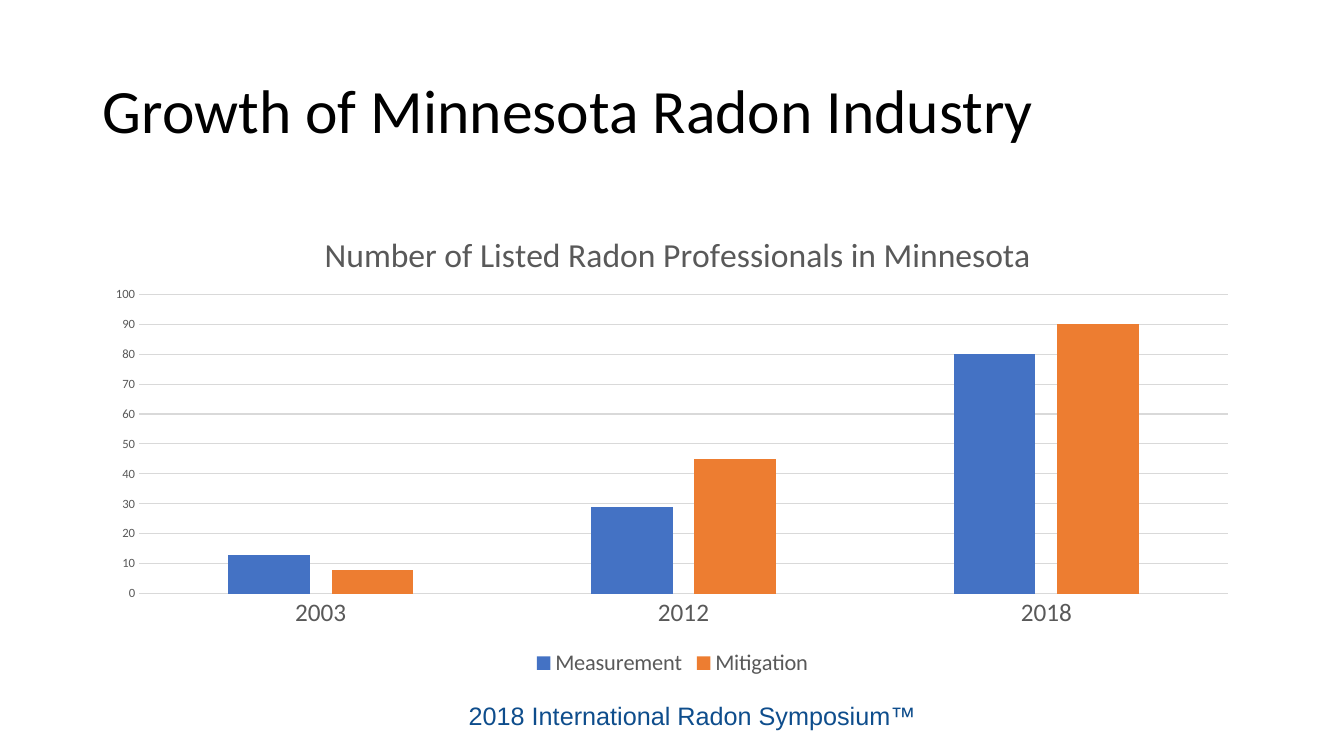
from dataclasses import dataclass

from lxml.etree import SubElement
from pptx import Presentation
from pptx.chart.data import CategoryChartData
from pptx.dml.color import RGBColor as RGB
from pptx.enum.chart import XL_CHART_TYPE as ChartType
from pptx.enum.chart import XL_LEGEND_POSITION as LegendPos
from pptx.enum.chart import XL_TICK_MARK as Tick
from pptx.enum.text import MSO_ANCHOR, PP_ALIGN
from pptx.oxml.ns import qn
from pptx.util import Inches, Pt

TITLE = "Growth of Minnesota Radon Industry"
FOOTER = "2018 International Radon Symposium™"
CHART_TITLE = "Number of Listed Radon Professionals in Minnesota"
YEARS = ["2003", "2012", "2018"]
PROFESSIONALS = [
    ("Measurement", [13, 29, 80], "4472C4"),
    ("Mitigation", [8, 45, 90], "ED7D31"),
]

# left, top, width, height in inches
TITLE_BOX = (0.92, 0.4, 11.5, 1.45)
CHART_BOX = (0.92, 2, 11.5, 4.76)
FOOTER_BOX = (4.55, 6.9, 4.68, 0.4)
PLOT_BOX = (1.38, 2.92, 10.8, 2.97)
CHART_TITLE_AT = (3.16, 2.24)


@dataclass(frozen=True)
class Theme:
    font: str = "Calibri"
    footer_font: str = "Arial"
    black: str = "000000"
    grey: str = "595959"
    rule: str = "D9D9D9"
    blue: str = "0E4D8C"
    title: int = 44
    chart_title: int = 24
    category: int = 18
    value: int = 9
    legend: int = 16
    footer: int = 18


THEME = Theme()


def style(font, size, color, name=THEME.font):
    font.name, font.size, font.bold = name, Pt(size), False
    font.color.rgb = RGB.from_string(color)


def rule(line):
    line.color.rgb = RGB.from_string(THEME.rule)
    line.width = Pt(0.75)


def write(tf, text, *font):
    p = tf.paragraphs[0]
    p.alignment = PP_ALIGN.LEFT
    r = p.add_run()
    r.text = text
    style(r.font, *font)
    return p


def place(parent, index, box, inner=False):
    """Fix a chart part at a slide position, as fractions of the chart."""
    for old in parent.findall(qn("c:layout")):
        parent.remove(old)
    layout = SubElement(parent, qn("c:layout"))
    parent.insert(index, layout)
    manual = SubElement(layout, qn("c:manualLayout"))
    left, top, width, height = CHART_BOX
    fractions = [(box[0] - left) / width, (box[1] - top) / height]
    fractions += [n / total for n, total in zip(box[2:], (width, height))]
    settings = [("layoutTarget", "inner")] if inner else []
    settings += [("xMode", "edge"), ("yMode", "edge")]
    settings += [(key, f"{n:.4f}") for key, n in zip("xywh", fractions)]
    for key, value in settings:
        SubElement(manual, qn(f"c:{key}")).set("val", value)


def add_title(s):
    sp = s.shapes.title
    sp.left, sp.top, sp.width, sp.height = map(Inches, TITLE_BOX)
    sp.text_frame.vertical_anchor = MSO_ANCHOR.MIDDLE
    p = write(sp.text_frame, TITLE, THEME.title, THEME.black)
    p.line_spacing = 0.9


def add_growth_chart(s):
    data = CategoryChartData()
    data.categories = YEARS
    for name, values, _ in PROFESSIONALS:
        data.add_series(name, values)
    frame = s.shapes.add_chart(
        ChartType.COLUMN_CLUSTERED, *map(Inches, CHART_BOX), data)
    chart = frame.chart
    style(chart.font, 10, THEME.black)

    chart.has_title = True
    title = chart.chart_title
    r = title.text_frame.paragraphs[0].add_run()
    r.text = CHART_TITLE
    style(r.font, THEME.chart_title, THEME.grey)
    title.include_in_layout = False
    place(title.element if hasattr(title, "element") else title._element,
          1, CHART_TITLE_AT)

    plot = chart.plots[0]
    plot.gap_width, plot.overlap = 219, -27
    plot.vary_by_categories = False
    for series, (_, _, color) in zip(plot.series, PROFESSIONALS):
        series.format.fill.solid()
        series.format.fill.fore_color.rgb = RGB.from_string(color)

    years, counts = chart.category_axis, chart.value_axis
    for axis, size in ((years, THEME.category), (counts, THEME.value)):
        axis.major_tick_mark = axis.minor_tick_mark = Tick.NONE
        style(axis.tick_labels.font, size, THEME.grey)
    rule(years.format.line)
    counts.format.line.fill.background()
    counts.has_major_gridlines = True
    rule(counts.major_gridlines.format.line)
    counts.minimum_scale, counts.maximum_scale = 0, 100
    counts.major_unit = 10

    chart.has_legend = True
    chart.legend.position = LegendPos.BOTTOM
    chart.legend.include_in_layout = False
    style(chart.legend.font, THEME.legend, THEME.grey)
    place(next(chart.element.iter(qn("c:plotArea"))), 0, PLOT_BOX, inner=True)


def add_footer(s):
    tf = s.shapes.add_textbox(*map(Inches, FOOTER_BOX)).text_frame
    tf.word_wrap = False
    write(tf, FOOTER, THEME.footer, THEME.blue, THEME.footer_font)


def main():
    prs = Presentation()
    prs.slide_width, prs.slide_height = Inches(13.33), Inches(7.5)
    s = prs.slides.add_slide(prs.slide_layouts[5])
    add_title(s)
    add_growth_chart(s)
    add_footer(s)
    prs.save("out.pptx")


if __name__ == "__main__":
    main()
